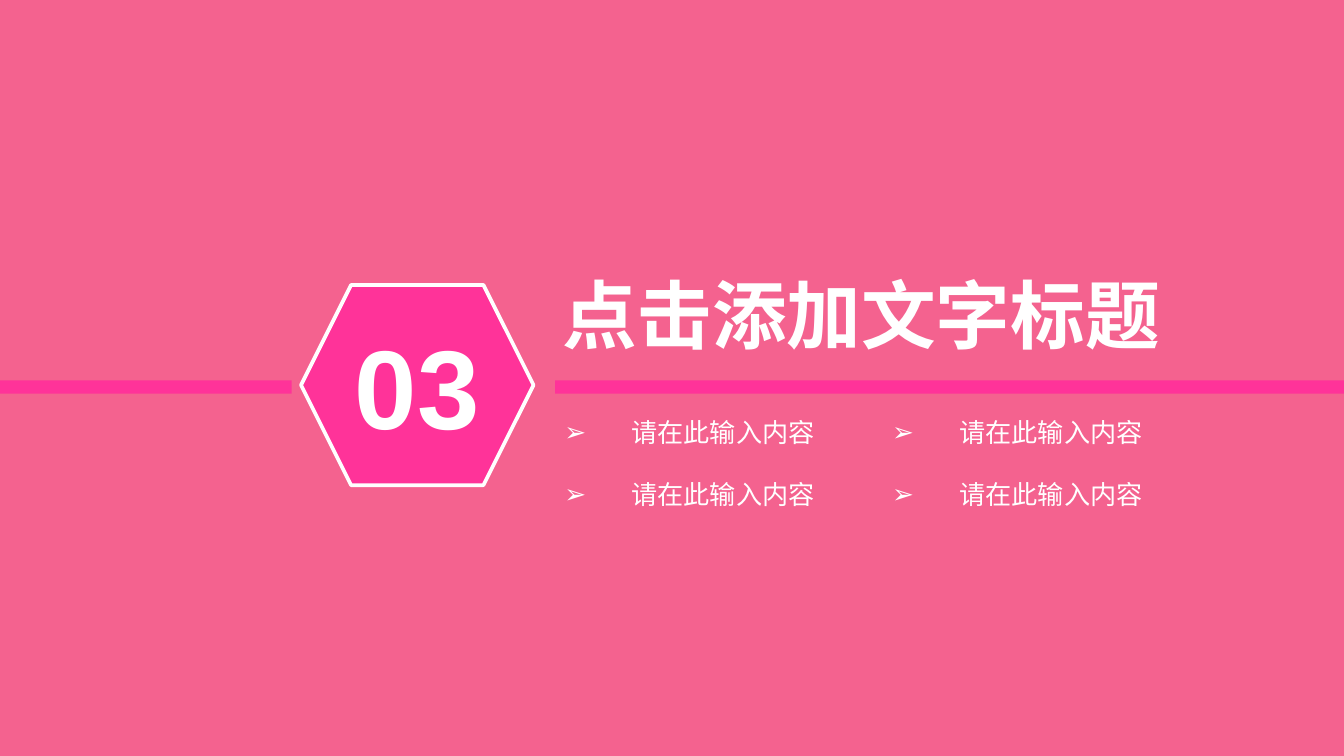
from lxml import etree
from pptx import Presentation
from pptx.dml.color import RGBColor
from pptx.enum.shapes import MSO_SHAPE
from pptx.enum.text import MSO_ANCHOR, MSO_AUTO_SIZE, PP_ALIGN
from pptx.oxml.ns import qn
from pptx.util import Inches, Pt

RECT, HEXAGON = MSO_SHAPE.RECTANGLE, MSO_SHAPE.HEXAGON
LEFT, CENTER = PP_ALIGN.LEFT, PP_ALIGN.CENTER
PINK = RGBColor(0xF4, 0x62, 0x8F)
MAGENTA = RGBColor(0xFF, 0x33, 0x99)
WHITE = RGBColor(0xFF, 0xFF, 0xFF)
LATIN, CJK = "Arial", "Noto Sans CJK SC"

NUMBER = "03"
TITLE = "点击添加文字标题"
ITEMS = [
    ["请在此输入内容", "请在此输入内容"],
    ["请在此输入内容", "请在此输入内容"],
]

SLIDE_W = 10
SLIDE_H = SLIDE_W * 9 / 16
BAR_TOP, BAR_H = 2.83, 0.1
BAR_SPANS = [(0, 2.17), (4.13, SLIDE_W)]
ITEM_LEFT, ITEM_TOP = 4.1, 3.05
ITEM_W, ITEM_H = 2.08, 0.34
COL_STEP, ROW_STEP = 2.44, 0.46
BULLET, INDENT = "➢", Inches(0.5)


def add_shape(slide, kind, *box):
    sp = slide.shapes.add_shape(kind, *map(Inches, box))
    sp.shadow.inherit = False
    sp.fill.solid()
    sp.fill.fore_color.rgb = MAGENTA
    sp.line.fill.background()
    return sp


def write(sp, text, *, size, font=CJK, bold=False, align=LEFT, bullet=None):
    p = sp.text_frame.paragraphs[0]
    p.alignment = align
    r = p.add_run()
    r.text = text
    r.font.size, r.font.bold, r.font.name = Pt(size), bold, font
    r.font.color.rgb = WHITE
    etree.SubElement(r.font._element, qn("a:ea")).set("typeface", font)
    if bullet:
        pPr = p._p.get_or_add_pPr()
        pPr.set("marL", str(INDENT))
        pPr.set("indent", str(-INDENT))
        etree.SubElement(pPr, qn("a:buFont")).set("typeface", LATIN)
        etree.SubElement(pPr, qn("a:buChar")).set("char", bullet)


def add_text(slide, text, *box, **style):
    sp = slide.shapes.add_textbox(*map(Inches, box))
    sp.text_frame.word_wrap = False
    sp.text_frame.auto_size = MSO_AUTO_SIZE.SHAPE_TO_FIT_TEXT
    write(sp, text, **style)


prs = Presentation()
prs.slide_width, prs.slide_height = Inches(SLIDE_W), Inches(SLIDE_H)
slide = prs.slides.add_slide(prs.slide_layouts[6])
slide.background.fill.solid()
slide.background.fill.fore_color.rgb = PINK

for start, end in BAR_SPANS:
    add_shape(slide, RECT, start, BAR_TOP, end - start, BAR_H)

badge = add_shape(slide, HEXAGON, 2.24, 2.12, 1.73, 1.49)
badge.line.color.rgb = WHITE
badge.line.width = Pt(2)
badge.text_frame.vertical_anchor = MSO_ANCHOR.MIDDLE
write(badge, NUMBER, size=60, font=LATIN, bold=True, align=CENTER)

add_text(slide, TITLE, 4.09, 1.95, 4.69, 0.77, size=40, bold=True)

for row, texts in enumerate(ITEMS):
    for col, text in enumerate(texts):
        add_text(slide, text, ITEM_LEFT + col * COL_STEP, ITEM_TOP + row * ROW_STEP,
                 ITEM_W, ITEM_H, size=14, bullet=BULLET)

prs.save("out.pptx")
